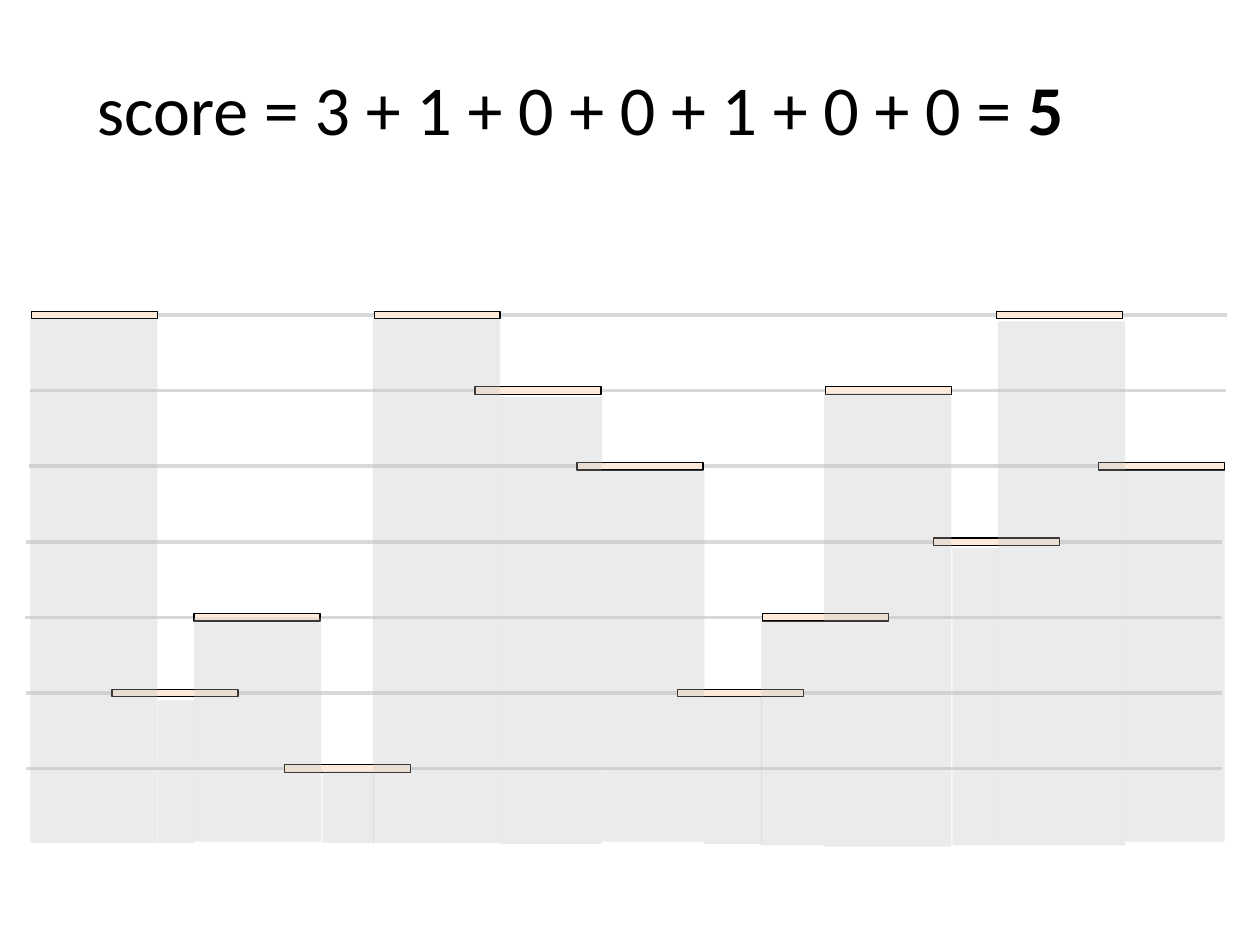
from typing import NamedTuple

from lxml.etree import SubElement
from pptx import Presentation
from pptx.dml.color import RGBColor
from pptx.enum.shapes import MSO_CONNECTOR as Connector, MSO_SHAPE as Shape
from pptx.oxml.ns import qn
from pptx.util import Inches, Pt

BLACK = RGBColor(0x00, 0x00, 0x00)
GUIDE_GREY = RGBColor(0xD9, 0xD9, 0xD9)
SHADE_GREY = RGBColor(0xBF, 0xBF, 0xBF)
PEACH = RGBColor(0xFD, 0xEA, 0xDA)

TOP_LEVEL, LEVEL_GAP = 2.5, 0.6
GUIDE_LENGTH = 9.49
INTERVAL_WIDTH, INTERVAL_HEIGHT = 1, 0.06
SHADE_OPACITY = 30
TITLE_FORMAT = {"name": "Calibri", "size": Pt(40)}


class Interval(NamedTuple):
    left: float
    level: int


class Shade(NamedTuple):
    """Area below the visible part of an interval."""
    left: float
    top: float
    width: float
    height: float


GUIDE_LEFTS = [0.25, 0.24, 0.23, 0.21, 0.2, 0.21, 0.21]

INTERVALS = [
    Interval(0.25, 0), Interval(2.97, 0), Interval(7.91, 0),
    Interval(3.77, 1), Interval(6.55, 1), Interval(1.54, 4),
    Interval(0.89, 5), Interval(8.72, 2), Interval(6.05, 4),
    Interval(4.58, 2), Interval(7.41, 3), Interval(5.38, 5),
    Interval(2.26, 6),
]

SHADES = [
    Shade(0.24, 2.53, 1.01, 4.16), Shade(2.96, 2.53, 1.01, 4.16),
    Shade(7.92, 2.55, 1.01, 4.16), Shade(6.54, 3.12, 1.01, 3.6),
    Shade(3.97, 3.15, 0.81, 3.55), Shade(4.78, 3.73, 0.81, 2.95),
    Shade(8.93, 3.73, 0.79, 2.95), Shade(6.04, 4.93, 0.5, 1.78),
    Shade(1.54, 4.9, 1.01, 1.78), Shade(1.25, 5.56, 0.29, 1.13),
    Shade(2.56, 6.12, 0.41, 0.57), Shade(7.56, 4.35, 0.36, 2.36),
    Shade(5.59, 5.53, 0.46, 1.17),
]


def level_y(level: int) -> float:
    return TOP_LEVEL + level * LEVEL_GAP


def add_guide(slide, left: float, level: int) -> None:
    y = Inches(level_y(level))
    guide = slide.shapes.add_connector(
        Connector.STRAIGHT, Inches(left), y, Inches(left + GUIDE_LENGTH), y)
    guide.line.color.rgb = GUIDE_GREY
    guide.line.width = Pt(2)
    SubElement(guide._element.spPr, qn("a:effectLst"))


def add_rectangle(slide, left: float, top: float, width: float, height: float,
                  color: RGBColor):
    rectangle = slide.shapes.add_shape(
        Shape.RECTANGLE, Inches(left), Inches(top), Inches(width), Inches(height))
    rectangle.shadow.inherit = False
    rectangle.fill.solid()
    rectangle.fill.fore_color.rgb = color
    return rectangle


def add_interval(slide, interval: Interval) -> None:
    bar = add_rectangle(
        slide, interval.left, level_y(interval.level) - INTERVAL_HEIGHT / 2,
        INTERVAL_WIDTH, INTERVAL_HEIGHT, PEACH)
    bar.line.color.rgb = BLACK
    bar.line.width = Pt(0.75)


def add_shade(slide, shade: Shade) -> None:
    area = add_rectangle(slide, *shade, SHADE_GREY)
    area.line.fill.background()
    color = area._element.spPr.find(qn("a:solidFill")).find(qn("a:srgbClr"))
    SubElement(color, qn("a:alpha"), val=str(SHADE_OPACITY * 1000))


def add_score(slide) -> None:
    box = slide.shapes.add_textbox(Inches(0.67), Inches(0.47), Inches(9), Inches(1.25))
    box.text_frame.word_wrap = True
    paragraph = box.text_frame.paragraphs[0]
    for text, bold in (("score = 3 + 1 + 0 + 0 + 1 + 0 + 0 = ", False), ("5", True)):
        run = paragraph.add_run()
        run.text = text
        for name, value in {**TITLE_FORMAT, "bold": bold}.items():
            setattr(run.font, name, value)
        run.font.color.rgb = BLACK


def main() -> None:
    presentation = Presentation()
    presentation.slide_width = Inches(10)
    presentation.slide_height = Inches(7.5)
    slide = presentation.slides.add_slide(presentation.slide_layouts[6])

    add_score(slide)
    for level, left in enumerate(GUIDE_LEFTS):
        add_guide(slide, left, level)
    for interval in INTERVALS:
        add_interval(slide, interval)
    for shade in SHADES:
        add_shade(slide, shade)

    presentation.save("out.pptx")


if __name__ == "__main__":
    main()
